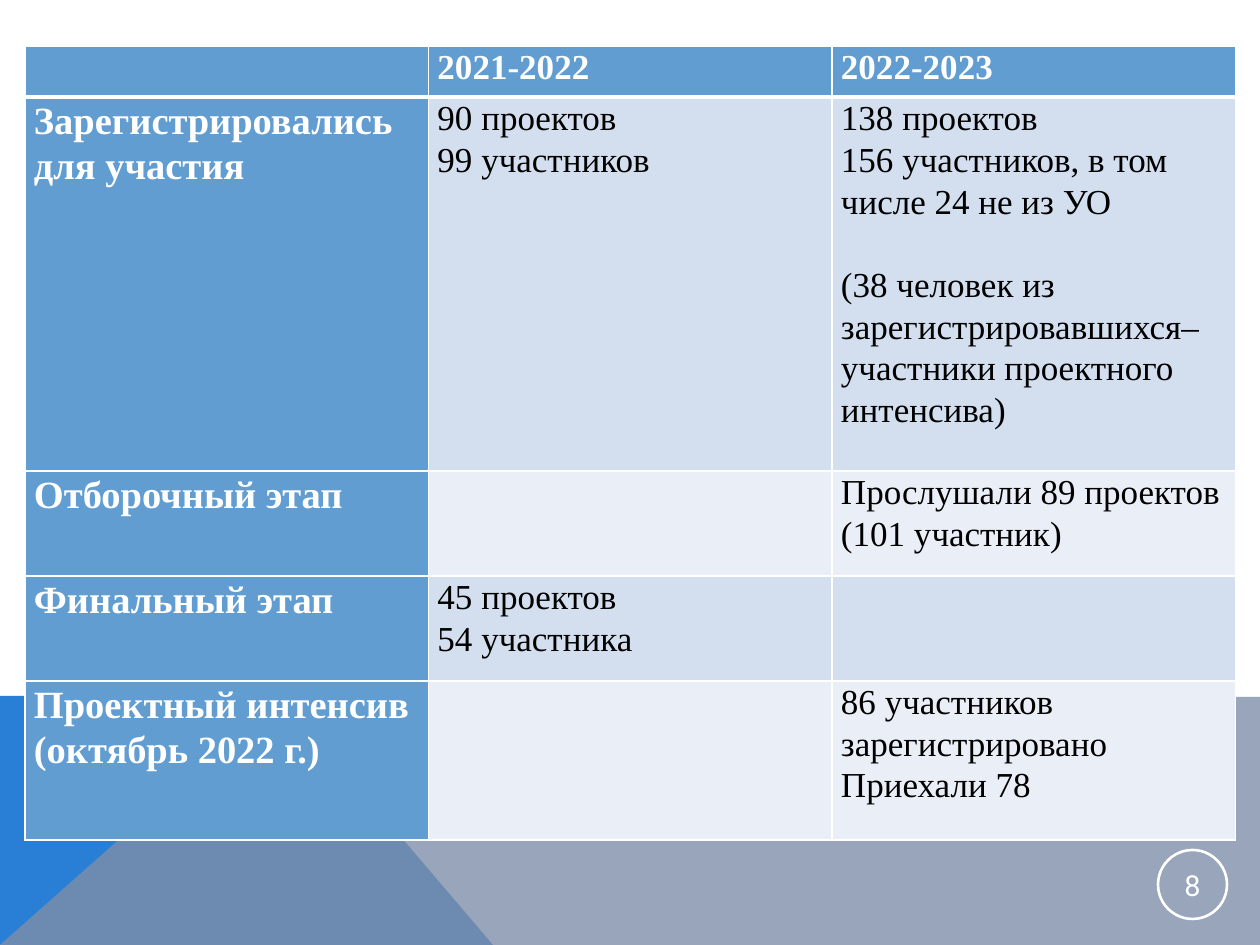
from lxml.etree import SubElement
from pptx import Presentation
from pptx.dml.color import RGBColor
from pptx.enum.shapes import MSO_SHAPE
from pptx.enum.text import MSO_ANCHOR, PP_ALIGN
from pptx.oxml import parse_xml
from pptx.oxml.ns import nsdecls, qn
from pptx.util import Pt

EMU_PER_PX = 914400 / 126
COLORS = {
    "white": "FFFFFF",
    "black": "000000",
    "header": "629DD1",
    "band_dark": "D3DFEE",
    "band_light": "EAEFF7",
    "wedge": "297FD5",
    "hill": "7F8FA9",
}
TABLE_FONT = "Times New Roman"
NUMBER_FONT = "Roboto"


def px(length):
    return round(length * EMU_PER_PX)


def color(name):
    return RGBColor.from_string(COLORS[name])


class SlidePainter:
    def __init__(self, slide):
        self.slide = slide

    def polygon(self, points, fill, opacity=100):
        builder = self.slide.shapes.build_freeform(*points[0], scale=EMU_PER_PX)
        builder.add_line_segments(points[1:], close=True)
        shape = builder.convert_to_shape()
        shape.shadow.inherit = False
        shape.fill.solid()
        shape.fill.fore_color.rgb = color(fill)
        shape.line.fill.background()
        if opacity < 100:
            fill_color = shape.fill._xPr.find(qn("a:solidFill"))[0]
            SubElement(fill_color, qn("a:alpha"), val=str(opacity * 1000))

    def page_number(self, left, top, size, number):
        circle = self.slide.shapes.add_shape(
            MSO_SHAPE.OVAL, px(left), px(top), px(size), px(size))
        circle.shadow.inherit = False
        circle.fill.background()
        circle.line.color.rgb = color("white")
        circle.line.width = Pt(1.5)
        frame = circle.text_frame
        frame.margin_left = frame.margin_right = px(1)
        frame.margin_top = frame.margin_bottom = px(1)
        frame.vertical_anchor = MSO_ANCHOR.MIDDLE
        para = frame.paragraphs[0]
        para.text = number
        para.alignment = PP_ALIGN.CENTER
        self.set_font(para, NUMBER_FONT, 16.5, "white", False)

    def table(self, left, top, widths, heights, rows):
        table = self.slide.shapes.add_table(
            len(rows), len(widths), px(left), px(top),
            px(sum(widths)), px(sum(heights))).table
        for column, width in zip(table.columns, widths):
            column.width = px(width)
        for row, height in zip(table.rows, heights):
            row.height = px(height)
        for i, row in enumerate(rows):
            band = "band_dark" if i % 2 else "band_light"
            for j, lines in enumerate(row):
                is_header = i == 0 or j == 0
                cell = table.cell(i, j)
                self.cell_style(cell, "header" if is_header else band, i)
                self.cell_text(cell, lines, 22 if j == 0 and i else 20, is_header)

    def cell_style(self, cell, fill, row_index):
        cell.margin_left = cell.margin_right = px(9)
        cell.margin_top = cell.margin_bottom = 0
        cell.fill.solid()
        cell.fill.fore_color.rgb = color(fill)
        # The rule under the header row is thicker than the others
        thick_side = {0: "lnB", 1: "lnT"}.get(row_index)
        properties = cell._tc.get_or_add_tcPr()
        for position, side in enumerate(("lnL", "lnR", "lnT", "lnB")):
            width = Pt(3 if side == thick_side else 1)
            properties.insert(position, parse_xml(
                f'<a:{side} {nsdecls("a")} w="{width}"><a:solidFill>'
                f'<a:srgbClr val="{COLORS["white"]}"/></a:solidFill></a:{side}>'))

    def cell_text(self, cell, lines, size, is_header):
        frame = cell.text_frame
        for i, line in enumerate(lines or [""]):
            para = frame.add_paragraph() if i else frame.paragraphs[0]
            para.text = line
            para.line_spacing = 1.07
            if line.startswith("(38"):
                para.space_before = Pt(24)
            self.set_font(para, TABLE_FONT, size,
                          "white" if is_header else "black", is_header)

    def set_font(self, para, name, size, font_color, bold):
        font = para.font
        font.name = name
        font.size = Pt(size)
        font.bold = bold
        font.color.rgb = color(font_color)


ROWS = [
    [[], ["2021-2022"], ["2022-2023"]],
    [["Зарегистрировались для участия"],
     ["90 проектов", "99 участников"],
     ["138 проектов", "156 участников, в том числе 24 не из УО",
      "(38 человек из зарегистрировавшихся– участники проектного интенсива)"]],
    [["Отборочный этап"], [], ["Прослушали 89 проектов", "(101 участник)"]],
    [["Финальный этап"], ["45 проектов", "54 участника"], []],
    [["Проектный интенсив", "(октябрь 2022 г.)"], [],
     ["86 участников зарегистрировано", "Приехали 78"]],
]


def main():
    deck = Presentation()
    deck.slide_width, deck.slide_height = px(1260), px(945)
    painter = SlidePainter(deck.slides.add_slide(deck.slide_layouts[6]))

    # Background shapes along the bottom
    painter.polygon([(0, 945), (0, 696), (281, 696), (493, 945)], "wedge")
    painter.polygon([(0, 945), (281, 696), (1260, 697), (1260, 945)], "hill", 80)

    # Page number
    painter.page_number(1158, 850, 69, "8")

    # Participation by season
    painter.table(25, 46, [403.5] * 3, [51, 374, 105, 105, 159], ROWS)

    deck.save("out.pptx")


if __name__ == "__main__":
    main()
